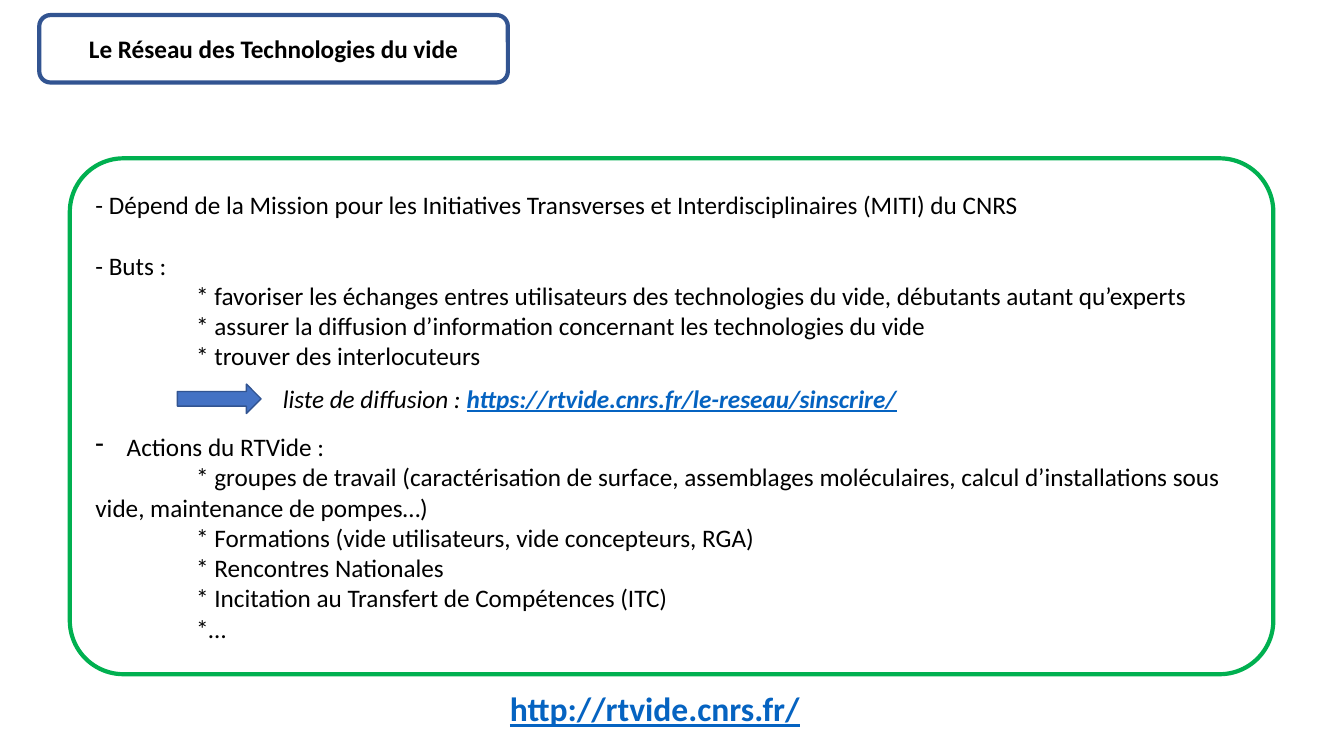
from lxml import etree
from pptx import Presentation
from pptx.dml.color import RGBColor
from pptx.enum.shapes import MSO_SHAPE
from pptx.enum.text import MSO_ANCHOR, PP_ALIGN
from pptx.oxml.ns import qn
from pptx.util import Cm, Pt

ROUNDED = MSO_SHAPE.ROUNDED_RECTANGLE
ARROW = MSO_SHAPE.RIGHT_ARROW
MIDDLE = MSO_ANCHOR.MIDDLE
LEFT, CENTER = PP_ALIGN.LEFT, PP_ALIGN.CENTER

FONT = "Calibri"
BLACK, LINK, NAVY, BLUE, GREEN = "000000", "0563C1", "325491", "4472C4", "00B050"
LINE_HEIGHT = 21.6

TITLE = "Le Réseau des Technologies du vide"
SITE = "http://rtvide.cnrs.fr/"
MAILING_LABEL = "liste de diffusion : "
MAILING_LINK = "https://rtvide.cnrs.fr/le-reseau/sinscrire/"

SECTIONS = [
    {"heading": "- Dépend de la Mission pour les Initiatives Transverses et Interdisciplinaires (MITI) du CNRS",
     "lines_before": 0, "bullet": None, "items": []},
    {"heading": "- Buts :", "lines_before": 1, "bullet": None, "items": [
        "* favoriser les échanges entres utilisateurs des technologies du vide, débutants autant qu’experts",
        "* assurer la diffusion d’information concernant les technologies du vide",
        "* trouver des interlocuteurs",
    ]},
    {"heading": "Actions du RTVide :", "lines_before": 2, "bullet": "-", "items": [
        "* groupes de travail (caractérisation de surface, assemblages moléculaires, "
        "calcul d’installations sous vide, maintenance de pompes…)",
        "* Formations (vide utilisateurs, vide concepteurs, RGA)",
        "* Rencontres Nationales",
        "* Incitation au Transfert de Compétences (ITC)",
        "*…",
    ]},
]


def color(value):
    return RGBColor.from_string(value)


def style(run, size=18, ink=BLACK, bold=False, italic=False, underline=False):
    font = run.font
    font.name, font.size = FONT, Pt(size)
    font.bold, font.italic, font.underline = bold, italic, underline
    font.color.rgb = color(ink)


def add_shape(slide, kind, box, line, width, fill=None):
    shape = slide.shapes.add_shape(kind, *map(Cm, box))
    shape.shadow.inherit = False
    shape.line.color.rgb = color(line)
    shape.line.width = Pt(width)
    if fill:
        shape.fill.solid()
        shape.fill.fore_color.rgb = color(fill)
    else:
        shape.fill.background()
    shape.text_frame.vertical_anchor = MIDDLE
    return shape


def add_text(slide, box, wrap):
    frame = slide.shapes.add_textbox(*map(Cm, box)).text_frame
    frame.word_wrap = wrap
    return frame.paragraphs[0]


def add_run(paragraph, text, **look):
    run = paragraph.add_run()
    run.text = text
    style(run, **look)


def set_indent(paragraph, margin, first_line, bullet=None):
    properties = paragraph._p.get_or_add_pPr()
    properties.set("marL", str(Cm(margin)))
    properties.set("indent", str(Cm(first_line)))
    if bullet:
        etree.SubElement(properties, qn("a:buFontTx"))
        etree.SubElement(properties, qn("a:buChar")).set("char", bullet)


def fill_sections(frame):
    paragraph = frame.paragraphs[0]
    for number, section in enumerate(SECTIONS):
        for position, text in enumerate([section["heading"], *section["items"]]):
            if number or position:
                paragraph = frame.add_paragraph()
            paragraph.text = text
            paragraph.alignment = LEFT
            if position:
                set_indent(paragraph, 0, 2.54)
            else:
                if section["bullet"]:
                    set_indent(paragraph, 0.79, -0.79, section["bullet"])
                if section["lines_before"]:
                    paragraph.space_before = Pt(section["lines_before"] * LINE_HEIGHT)
            style(paragraph.runs[0])


def main():
    presentation = Presentation()
    presentation.slide_width, presentation.slide_height = Cm(33.87), Cm(19.05)
    slide = presentation.slides.add_slide(presentation.slide_layouts[6])

    title = add_shape(slide, ROUNDED, (0.99, 0.38, 11.81, 1.7), NAVY, 3)
    paragraph = title.text_frame.paragraphs[0]
    paragraph.text = TITLE
    paragraph.alignment = CENTER
    style(paragraph.runs[0], bold=True)

    panel = add_shape(slide, ROUNDED, (1.76, 3.99, 30.33, 13), GREEN, 3)
    panel.adjustments[0] = 0.104
    panel.text_frame.word_wrap = True
    fill_sections(panel.text_frame)

    site = add_text(slide, (12.6, 17.22, 7.92, 1.27), False)
    add_run(site, SITE, size=24, ink=LINK, bold=True, underline=True)

    add_shape(slide, ARROW, (4.47, 9.68, 2.11, 0.74), NAVY, 1, BLUE)
    mailing = add_text(slide, (6.88, 9.53, 19.02, 1.02), True)
    add_run(mailing, MAILING_LABEL, italic=True)
    add_run(mailing, MAILING_LINK, ink=LINK, bold=True, italic=True, underline=True)

    presentation.save("out.pptx")


if __name__ == "__main__":
    main()
